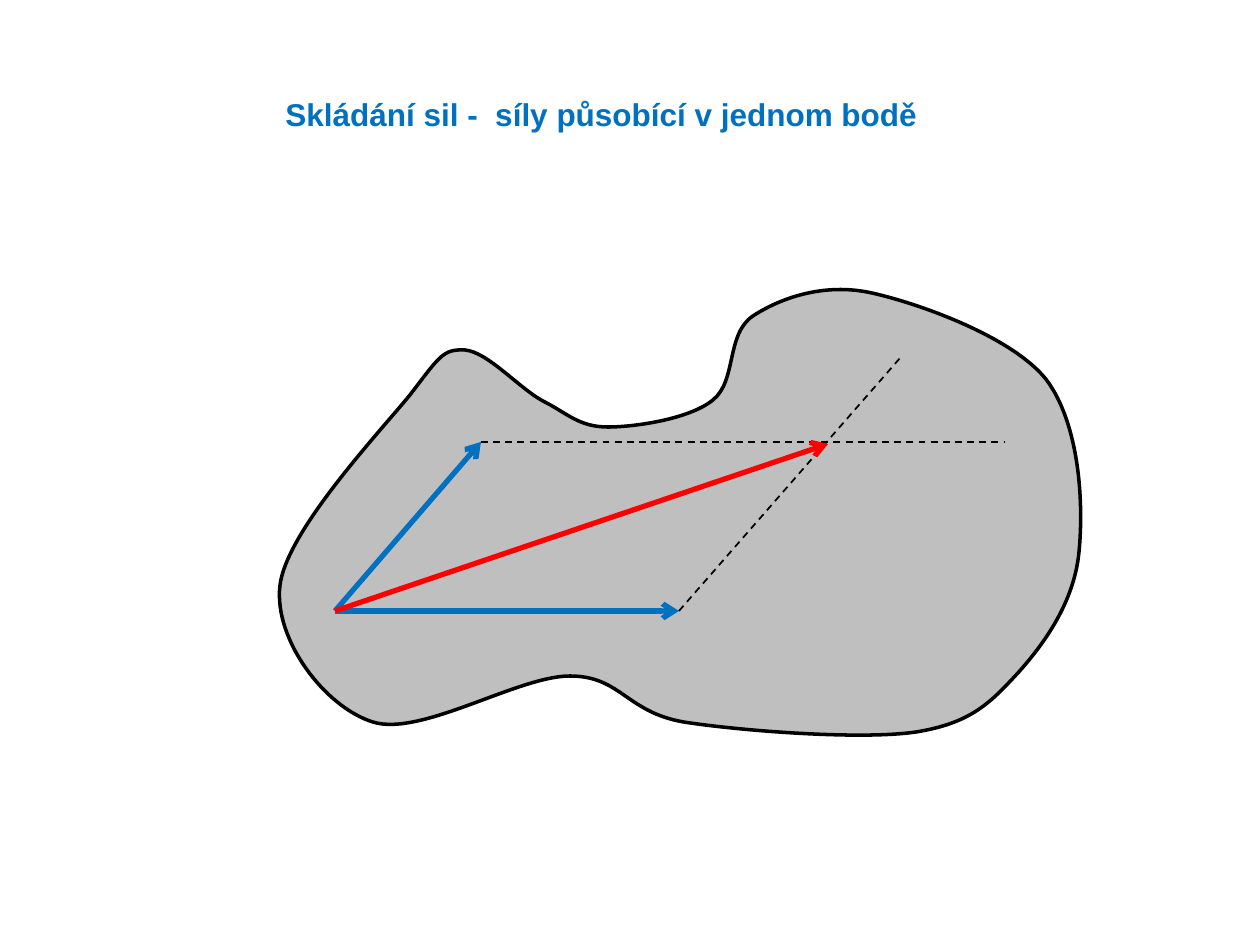
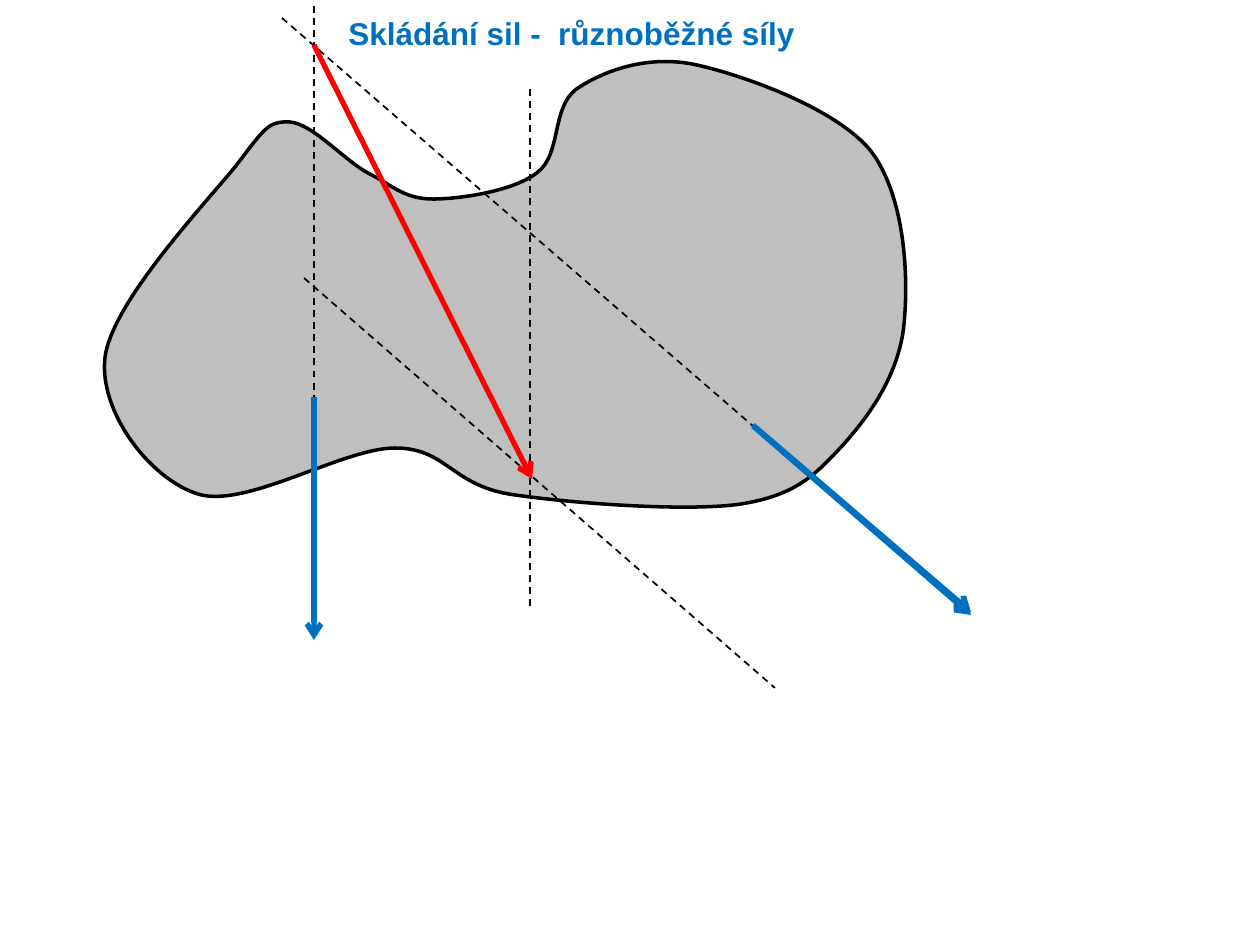
from lxml import etree
from pptx import Presentation
from pptx.dml.color import RGBColor
from pptx.enum.dml import MSO_LINE
from pptx.enum.shapes import MSO_CONNECTOR
from pptx.enum.text import MSO_AUTO_SIZE
from pptx.oxml.ns import qn
from pptx.util import Pt

PX = 914400 // 126
STRAIGHT = MSO_CONNECTOR.STRAIGHT
DASH = MSO_LINE.DASH
GROW = MSO_AUTO_SIZE.SHAPE_TO_FIT_TEXT
FONT = "Arial"
COLORS = {"force": "0070C0", "result": "FF0000", "body": "BFBFBF", "line": "000000"}

BODY_START = (130, 105)
BODY_CURVES = [
    ((98, 144), (6, 242), (0, 296)),
    ((-6, 350), (45, 417), (93, 432)),
    ((141, 447), (238, 386), (290, 386)),
    ((341, 386), (346, 422), (404, 432)),
    ((462, 441), (581, 450), (636, 442)),
    ((692, 433), (711, 412), (738, 383)),
    ((765, 353), (794, 312), (799, 263)),
    ((804, 214), (800, 134), (766, 89)),
    ((732, 47), (641, 14), (592, 3)),
    ((543, -8), (499, 9), (473, 26)),
    ((446, 44), (457, 91), (433, 110)),
    ((410, 129), (355, 137), (328, 137)),
    ((299, 137), (287, 123), (263, 111)),
    ((239, 98), (208, 62), (185, 60)),
    ((163, 59), (160, 66), BODY_START),
]


def rgb(name):
    return RGBColor.from_string(COLORS[name])


def add_text(s, text, box, size=18, color="force", bold=True):
    sp = s.shapes.add_textbox(*(v * PX for v in box))
    tf = sp.text_frame
    tf.word_wrap = True
    tf.auto_size = GROW
    r = tf.paragraphs[0].add_run()
    r.text = text
    r.font.name = FONT
    r.font.size = Pt(size)
    r.font.bold = bold
    r.font.color.rgb = rgb(color)


def add_body(s, x, y):
    builder = s.shapes.build_freeform(*BODY_START, scale=PX)
    builder.add_line_segments([pt for curve in BODY_CURVES for pt in curve], close=True)
    sp = builder.convert_to_shape(x * PX, y * PX)
    segments = list(sp._element.iter(qn("a:lnTo")))
    for i in range(0, len(segments), 3):
        bezier = etree.Element(qn("a:cubicBezTo"))
        segments[i].addprevious(bezier)
        for segment in segments[i:i + 3]:
            bezier.append(segment[0])
            segment.getparent().remove(segment)
    sp.shadow.inherit = False
    sp.fill.solid()
    sp.fill.fore_color.rgb = rgb("body")
    sp.line.color.rgb = rgb("line")
    sp.line.width = Pt(2)


def add_line(s, origin, start, end, color, width):
    x, y = origin
    ends = [(x + px, y + py) for px, py in (start, end)]
    line = s.shapes.add_connector(STRAIGHT, *(v * PX for pt in ends for v in pt))
    line.line.color.rgb = rgb(color)
    line.line.width = Pt(width)
    etree.SubElement(line._element.spPr, qn("a:effectLst"))
    return line


def add_guide(s, origin, start, end):
    add_line(s, origin, start, end, "line", 1).line.dash_style = DASH


def add_force(s, origin, start, end, color="force"):
    line = add_line(s, origin, start, end, color, 3)
    etree.SubElement(line.line._get_or_add_ln(), qn("a:tailEnd"), type="arrow")


def add_result(s, origin, start, end):
    add_force(s, origin, start, end, "result")


def add_force_slide(prs, title, title_at, body_at, lines):
    s = prs.slides.add_slide(prs.slide_layouts[6])
    add_body(s, *body_at)
    add_text(s, title, (*title_at, 674, 50))
    for draw, start, end in lines:
        draw(s, body_at, start, end)


def main():
    prs = Presentation()
    prs.slide_width, prs.slide_height = 1260 * PX, 945 * PX

    point, right, up = (55, 321), (399, 321), (201, 152)
    add_force_slide(prs, "Skládání sil -  síly působící v jednom bodě", (273, 89), (280, 290), [
        (add_force, point, right),
        (add_force, point, up),
        (add_guide, up, (724, 152)),
        (add_guide, right, (621, 67)),
        (add_result, point, (548, 154)),
    ])

    slanted = (648, 364)
    add_force_slide(prs, "Skládání sil -  různoběžné síly", (336, 8), (105, 62), [
        (add_guide, (209, -56), (209, 467)),
        (add_guide, (177, -44), slanted),
        (add_force, (209, 335), (209, 578)),
        (add_force, slanted, (866, 553)),
        (add_force, (648, 363), (866, 550)),
        (add_guide, (199, 216), (670, 626)),
        (add_guide, (425, 27), (425, 549)),
        (add_result, (209, -17), (427, 417)),
    ])
    prs.save("out.pptx")


if __name__ == "__main__":
    main()
